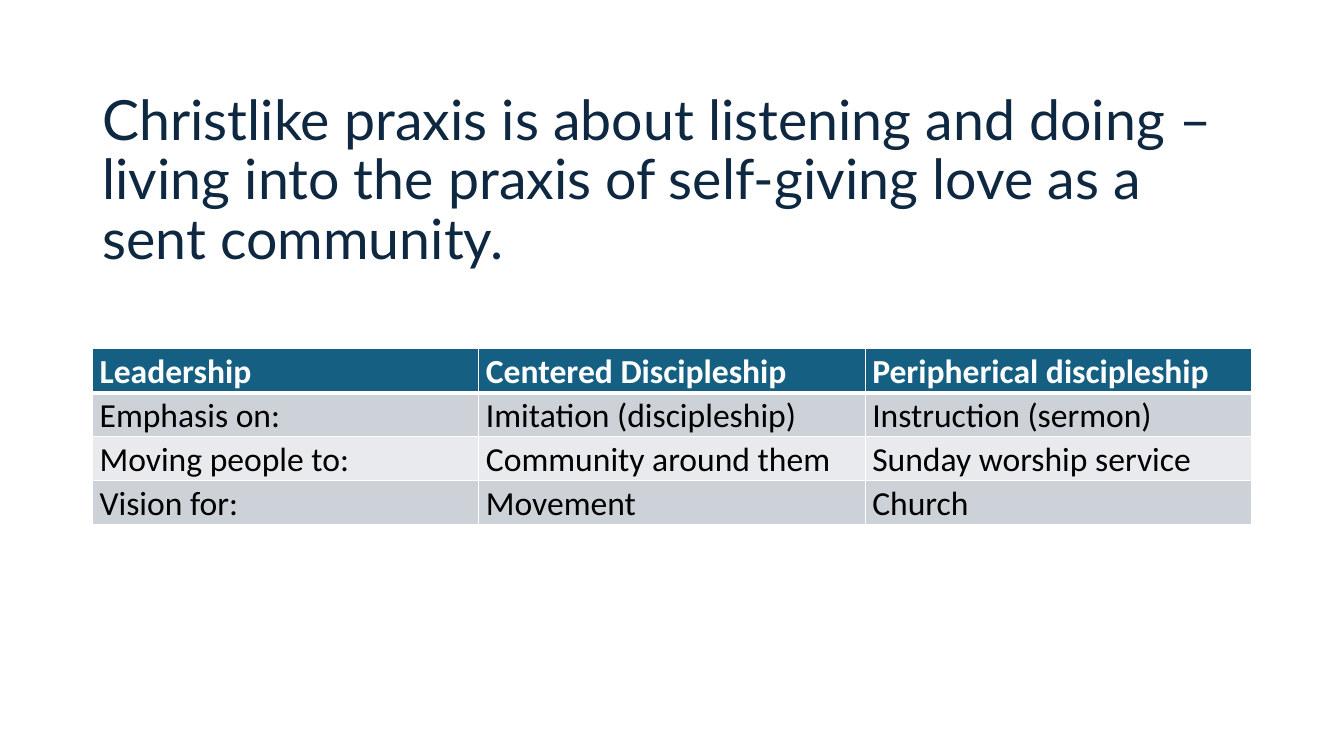
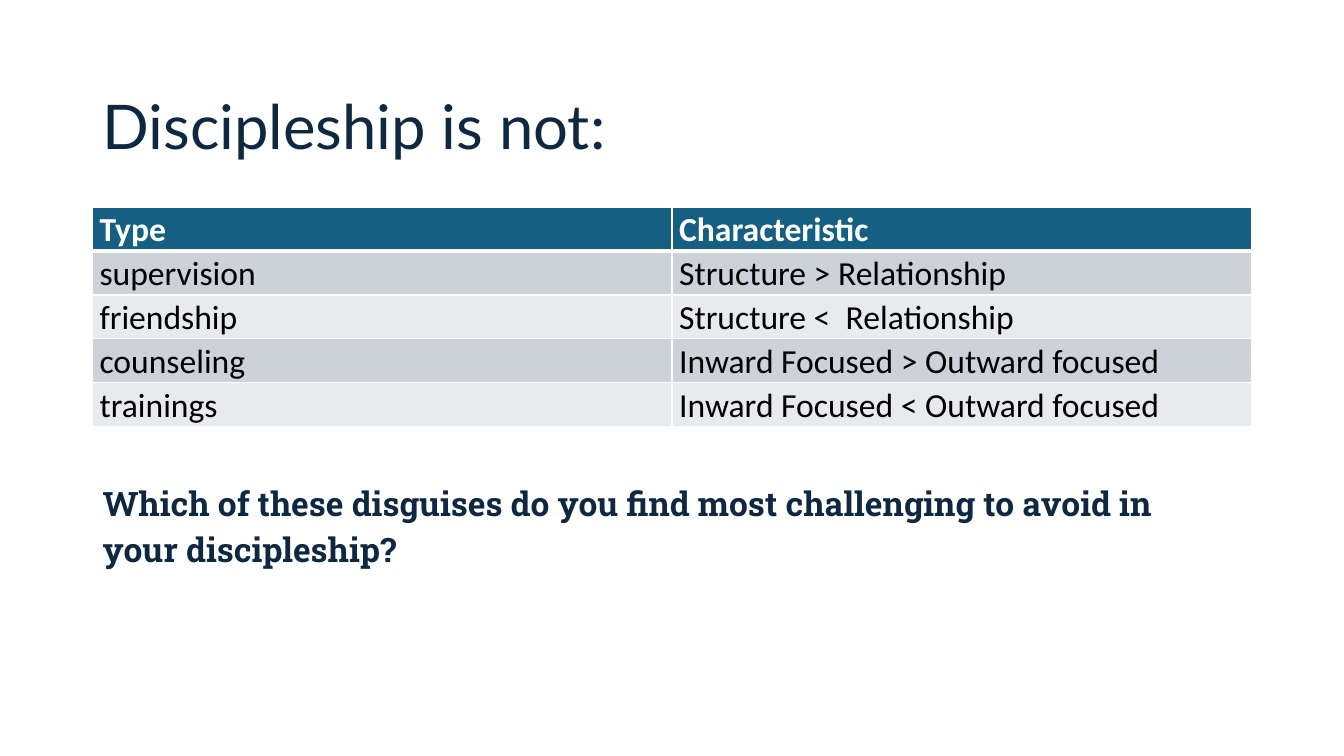
from lxml.etree import SubElement
from pptx import Presentation
from pptx.dml.color import RGBColor
from pptx.enum.text import MSO_ANCHOR as Anchor, MSO_AUTO_SIZE as AutoSize, PP_ALIGN as Align
from pptx.oxml.ns import qn
from pptx.util import Cm, Pt

# Shared look
NAVY, TEAL, WHITE, BLACK = "0E2841", "156082", "FFFFFF", "000000"
BAND_FILLS = ["CCD2D8", "E8EAED"]
LEFT, WIDTH = 2.33, 29.21
ROW_HEIGHT = 1.1
TEXT_SIZE = 24


def color(hex_string):
    return RGBColor.from_string(hex_string)


def format_text(text_frame, font_name, size, text_color, bold, line_spacing, before=0, after=0):
    for paragraph in text_frame.paragraphs:
        paragraph.alignment = Align.LEFT
        paragraph.line_spacing = line_spacing
        paragraph.space_before = Pt(before)
        paragraph.space_after = Pt(after)
        for run in paragraph.runs:
            run.font.name = font_name
            run.font.size = Pt(size)
            run.font.bold = bold
            run.font.color.rgb = color(text_color)


presentation = Presentation()
presentation.slide_width = Cm(33.87)
presentation.slide_height = Cm(19.05)
TITLE_AND_CONTENT, TITLE_ONLY = presentation.slide_layouts[1], presentation.slide_layouts[5]

# Content; tops and heights are in centimetres
slides = [
    {
        "layout": TITLE_ONLY,
        "title": "Christlike praxis is about listening and doing – living into the praxis "
                 "of self-giving love as a sent community.",
        "title_top": 2.26, "title_height": 4.65, "title_size": 39.6,
        "table_top": 8.79,
        "rows": [
            ["Leadership", "Centered Discipleship", "Peripherical discipleship"],
            ["Emphasis on:", "Imitation (discipleship)", "Instruction (sermon)"],
            ["Moving people to:", "Community around them", "Sunday worship service"],
            ["Vision for:", "Movement", "Church"],
        ],
    },
    {
        "layout": TITLE_AND_CONTENT,
        "title": "Discipleship is not:",
        "title_top": 1.85, "title_height": 2.84, "title_size": 44,
        "table_top": 5.22,
        "rows": [
            ["Type", "Characteristic"],
            ["supervision", "Structure > Relationship"],
            ["friendship", "Structure <  Relationship"],
            ["counseling", "Inward Focused > Outward focused"],
            ["trainings", "Inward Focused < Outward focused"],
        ],
        "question": "Which of these disguises do you find most challenging to avoid in\n"
                    "your discipleship?",
    },
]

for content in slides:
    slide = presentation.slides.add_slide(content["layout"])

    # Title
    title = slide.shapes.title
    title.left, title.top = Cm(LEFT), Cm(content["title_top"])
    title.width, title.height = Cm(WIDTH), Cm(content["title_height"])
    title.text_frame.text = content["title"]
    title.text_frame.auto_size = AutoSize.NONE
    title.text_frame.vertical_anchor = Anchor.MIDDLE
    format_text(title.text_frame, "Lato", content["title_size"], NAVY, False, 0.9)

    # Closing question in the body placeholder, without bullets
    if "question" in content:
        body = slide.placeholders[1]
        body.left, body.top, body.width, body.height = Cm(LEFT), Cm(12.17), Cm(WIDTH), Cm(2.29)
        body.text_frame.text = content["question"]
        body.text_frame.auto_size = AutoSize.NONE
        body.text_frame.vertical_anchor = Anchor.BOTTOM
        format_text(body.text_frame, "Roboto Slab", TEXT_SIZE, NAVY, True, 0.8, before=10)
        for paragraph in body.text_frame.paragraphs:
            properties = paragraph._p.get_or_add_pPr()
            properties.set("marL", "0")
            properties.set("indent", "0")
            SubElement(properties, qn("a:buNone"))

    # Table with equal columns
    rows = content["rows"]
    column_count = len(rows[0])
    table = slide.shapes.add_table(len(rows), column_count, Cm(LEFT), Cm(content["table_top"]),
                                   Cm(WIDTH), Cm(ROW_HEIGHT * len(rows))).table
    for row_index, row in enumerate(rows):
        is_header = row_index == 0
        fill = TEAL if is_header else BAND_FILLS[(row_index - 1) % 2]
        for column_index, text in enumerate(row):
            cell = table.cell(row_index, column_index)
            cell.margin_left = cell.margin_right = Cm(0.18)
            cell.margin_top = cell.margin_bottom = 0
            cell.text_frame.text = text
            format_text(cell.text_frame, "Calibri", TEXT_SIZE, WHITE if is_header else BLACK,
                        is_header, 1.07, after=8)

            # White borders, thicker between header and body
            cell_properties = cell._tc.get_or_add_tcPr()
            for side in ["L", "R", "T", "B"]:
                thick = (side == "B" and is_header) or (side == "T" and row_index == 1)
                line = SubElement(cell_properties, qn(f"a:ln{side}"), w=str(Pt(3 if thick else 1)))
                line_fill = SubElement(line, qn("a:solidFill"))
                SubElement(line_fill, qn("a:srgbClr"), val=WHITE)
            cell.fill.solid()
            cell.fill.fore_color.rgb = color(fill)

presentation.save("out.pptx")
